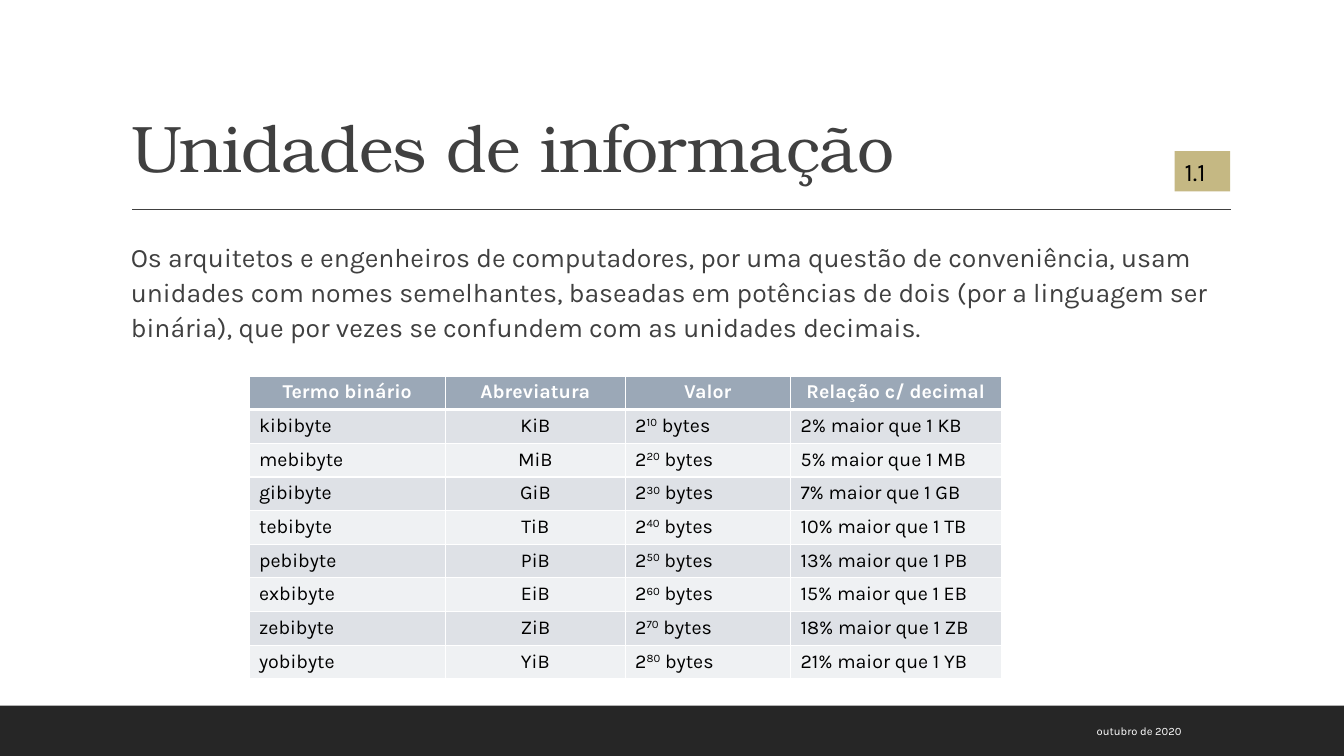
from lxml import etree
from pptx import Presentation
from pptx.dml.color import RGBColor
from pptx.enum.shapes import MSO_CONNECTOR, MSO_SHAPE
from pptx.enum.text import MSO_ANCHOR, MSO_AUTO_SIZE, PP_ALIGN
from pptx.oxml.ns import qn
from pptx.util import Inches, Pt

TITLE = "Unidades de informação"
INTRO = (
    "Os arquitetos e engenheiros de computadores, por uma questão de conveniência, "
    "usam unidades com nomes semelhantes, baseadas em potências de dois (por a "
    "linguagem ser binária), que por vezes se confundem com as unidades decimais."
)
DATE = "outubro de 2020"
SECTION = "1.1"
HEADERS = ["Termo binário", "Abreviatura", "Valor", "Relação c/ decimal"]
UNITS = [
    ("kibibyte", "KiB", "10", "2% maior que 1 KB"),
    ("mebibyte", "MiB", "20", "5% maior que 1 MB"),
    ("gibibyte", "GiB", "30", "7% maior que 1 GB"),
    ("tebibyte", "TiB", "40", "10% maior que 1 TB"),
    ("pebibyte", "PiB", "50", "13% maior que 1 PB"),
    ("exbibyte", "EiB", "60", "15% maior que 1 EB"),
    ("zebibyte", "ZiB", "70", "18% maior que 1 ZB"),
    ("yobibyte", "YiB", "80", "21% maior que 1 YB"),
]
COLUMN_WIDTHS = [1.95, 1.78, 1.64, 2.09]
ROW_HEIGHT = 0.32
CENTRED_COLUMN, POWER_COLUMN = 1, 2

COLORS = {
    "white": "FFFFFF", "black": "000000", "text": "404040", "footer": "262626",
    "header": "9BA8B7", "odd": "DEE1E6", "even": "EFF1F3", "badge": "C5B883",
}
BODY_FONT, TITLE_FONT = "Karla", "TeX Gyre Bonum"


def color(name):
    return RGBColor.from_string(COLORS[name])


def set_all(target, values):
    for name, value in values.items():
        setattr(target, name, value)


def place(shape, left, top, width, height):
    set_all(shape, {"left": Inches(left), "top": Inches(top),
                    "width": Inches(width), "height": Inches(height)})


def add_run(paragraph, text, size, color_name, font=BODY_FONT, bold=False):
    run = paragraph.add_run()
    run.text = text
    set_all(run.font, {"size": Pt(size), "name": font, "bold": bold})
    run.font.color.rgb = color(color_name)
    return run


def add_rectangle(slide, fill, *box):
    shape = slide.shapes.add_shape(MSO_SHAPE.RECTANGLE, *map(Inches, box))
    shape.shadow.inherit = False
    shape.fill.solid()
    shape.fill.fore_color.rgb = color(fill)
    shape.line.fill.background()
    return shape


def add_border(cell, side, width):
    line = etree.SubElement(cell._tc.get_or_add_tcPr(), qn(f"a:{side}"), w=str(Pt(width)))
    fill = etree.SubElement(line, qn("a:solidFill"))
    etree.SubElement(fill, qn("a:srgbClr"), val=COLORS["white"])


def format_cell(cell, fill, bottom_width):
    for side in ("lnL", "lnR", "lnT"):
        add_border(cell, side, 1)
    add_border(cell, "lnB", bottom_width)
    cell.fill.solid()
    cell.fill.fore_color.rgb = color(fill)


def add_title(slide):
    title = slide.shapes.title
    place(title, 1.2, 0.31, 11, 1.59)
    set_all(title.text_frame, {"vertical_anchor": MSO_ANCHOR.BOTTOM, "word_wrap": True,
                               "auto_size": MSO_AUTO_SIZE.NONE})
    paragraph = title.text_frame.paragraphs[0]
    set_all(paragraph, {"alignment": PP_ALIGN.LEFT, "line_spacing": 0.9})
    run = add_run(paragraph, TITLE, 47, "text", TITLE_FONT)
    run.font._element.set("spc", "-50")


def add_rule(slide):
    rule = slide.shapes.add_connector(
        MSO_CONNECTOR.STRAIGHT, Inches(1.31), Inches(2.08), Inches(12.21), Inches(2.08))
    rule.line.color.rgb = color("text")
    rule.line.width = Pt(1)
    etree.SubElement(rule._element.spPr, qn("a:effectLst"))


def add_intro(slide):
    box = slide.shapes.add_textbox(Inches(1.2), Inches(2.31), Inches(11), Inches(1.3))
    set_all(box.text_frame, {"word_wrap": True, "margin_left": Inches(0.1), "margin_right": 0})
    paragraph = box.text_frame.paragraphs[0]
    set_all(paragraph, {"line_spacing": 1.1, "space_after": Pt(2)})
    add_run(paragraph, INTRO, 19, "text")


def add_date(slide):
    box = slide.shapes.add_textbox(Inches(8.99), Inches(7.05), Inches(2.83), Inches(0.4))
    set_all(box.text_frame, {"word_wrap": True, "vertical_anchor": MSO_ANCHOR.MIDDLE})
    paragraph = box.text_frame.paragraphs[0]
    paragraph.alignment = PP_ALIGN.RIGHT
    add_run(paragraph, DATE, 8, "white")


def add_units_table(slide):
    row_count = len(UNITS) + 1
    table = slide.shapes.add_table(
        row_count, len(HEADERS), Inches(2.47), Inches(3.73),
        Inches(sum(COLUMN_WIDTHS)), Inches(ROW_HEIGHT * row_count)).table
    for column, width in zip(table.columns, COLUMN_WIDTHS):
        column.width = Inches(width)
    for row_index, values in enumerate([HEADERS, *UNITS]):
        is_header = row_index == 0
        fill = "header" if is_header else "odd" if row_index % 2 else "even"
        table.rows[row_index].height = Inches(ROW_HEIGHT)
        for column_index, value in enumerate(values):
            cell = table.cell(row_index, column_index)
            format_cell(cell, fill, 3 if is_header else 1)
            paragraph = cell.text_frame.paragraphs[0]
            centred = is_header or column_index == CENTRED_COLUMN
            paragraph.alignment = PP_ALIGN.CENTER if centred else PP_ALIGN.LEFT
            if is_header:
                add_run(paragraph, value, 14, "white", bold=True)
            elif column_index == POWER_COLUMN:
                add_run(paragraph, "2", 14, "black")
                exponent = add_run(paragraph, value, 14, "black")
                exponent.font._element.set("baseline", "30000")
                add_run(paragraph, " bytes", 14, "black")
            else:
                add_run(paragraph, value, 14, "black")


def add_badge(slide):
    badge = add_rectangle(slide, "badge", 11.65, 1.5, 0.55, 0.4)
    set_all(badge.text_frame, {"word_wrap": True, "vertical_anchor": MSO_ANCHOR.TOP})
    paragraph = badge.text_frame.paragraphs[0]
    paragraph.alignment = PP_ALIGN.LEFT
    add_run(paragraph, SECTION, 18, "black")


def main():
    presentation = Presentation()
    set_all(presentation, {"slide_width": Inches(13.33), "slide_height": Inches(7.5)})
    slide = presentation.slides.add_slide(presentation.slide_layouts[5])
    add_rectangle(slide, "footer", 0, 7, 13.33, 0.5)
    add_rule(slide)
    add_title(slide)
    add_intro(slide)
    add_date(slide)
    add_units_table(slide)
    add_badge(slide)
    presentation.save("out.pptx")


if __name__ == "__main__":
    main()
